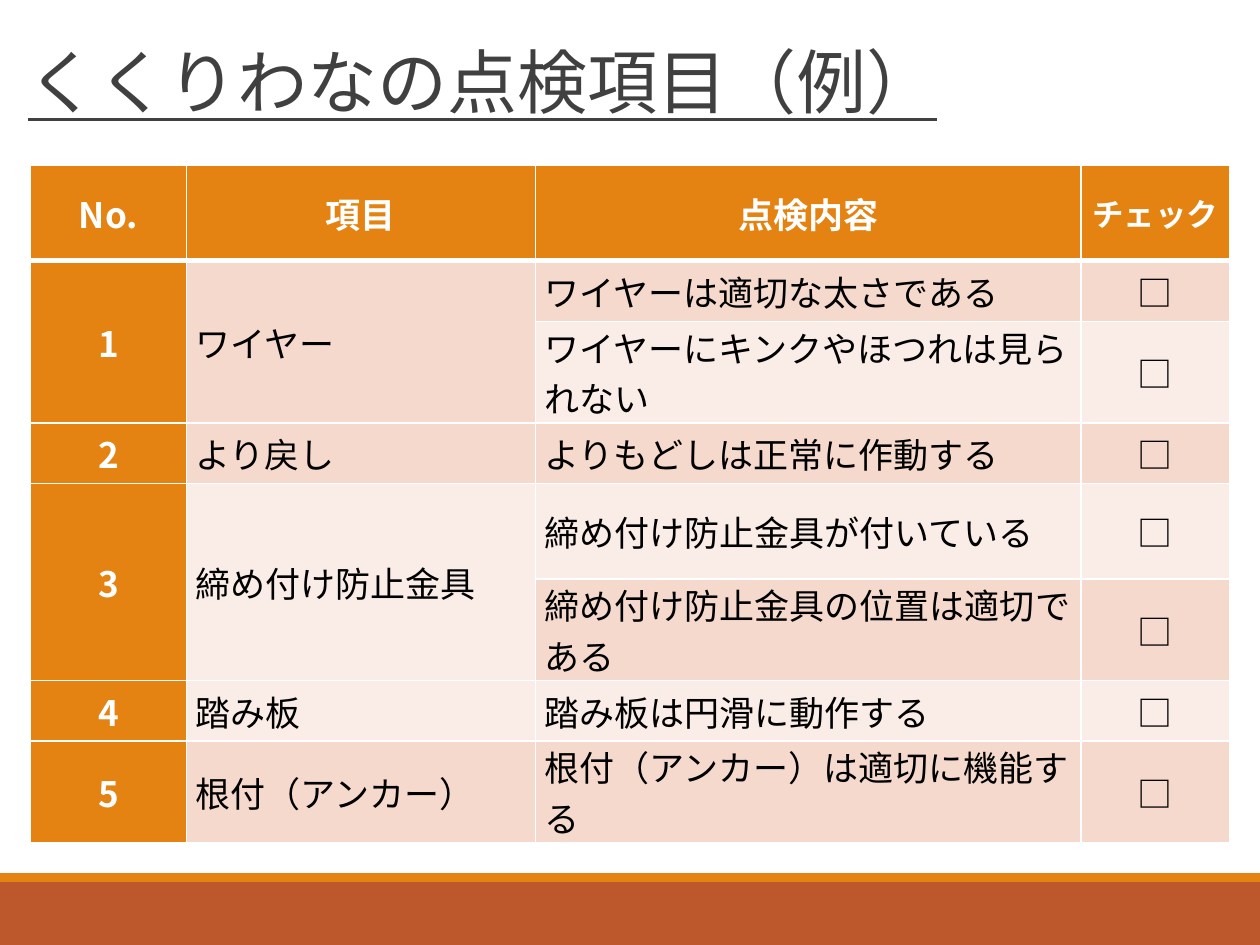
import pptx
import pptx.dml.color
import pptx.enum.shapes
import pptx.enum.text
import pptx.oxml
import pptx.oxml.ns
import pptx.util
from pptx.util import Inches

COLORS = {"orange": "E48312", "rust": "BD582C", "odd": "F5D9CC", "even": "FAEDE7",
          "title": "404040", "text": "000000", "white": "FFFFFF"}
FONT = "Noto Sans CJK JP"
CENTER = pptx.enum.text.PP_ALIGN.CENTER
LEFT = pptx.enum.text.PP_ALIGN.LEFT
MIDDLE = pptx.enum.text.MSO_ANCHOR.MIDDLE

HEADINGS = ["No.", "項目", "点検内容", "チェック"]
INSPECTIONS = [
    ("ワイヤー", ["ワイヤーは適切な太さである", "ワイヤーにキンクやほつれは見られない"]),
    ("より戻し", ["よりもどしは正常に作動する"]),
    ("締め付け防止金具", ["締め付け防止金具が付いている", "締め付け防止金具の位置は適切である"]),
    ("踏み板", ["踏み板は円滑に動作する"]),
    ("根付（アンカー）", ["根付（アンカー）は適切に機能する"]),
]
COLUMN_WIDTHS = [1.24, 2.77, 4.33, 1.18]
ROW_HEIGHTS = [0.76, 0.48, 0.76, 0.48, 0.76, 0.76, 0.48, 0.76]


def rgb(name):
    return pptx.dml.color.RGBColor.from_string(COLORS[name])


def style_run(run, size, color, bold=False):
    run.font.size = pptx.util.Pt(size)
    run.font.name = FONT
    run.font.bold = bold
    run.font.color.rgb = rgb(color)
    east_asian = pptx.oxml.parse_xml(
        f'<a:ea {pptx.oxml.ns.nsdecls("a")} typeface="{FONT}"/>')
    run.font._element.find(pptx.oxml.ns.qn("a:latin")).addnext(east_asian)


def set_borders(cell, top, bottom):
    properties = cell._tc.get_or_add_tcPr()
    widths = {"lnL": 1, "lnR": 1, "lnT": top, "lnB": bottom}
    for position, (side, width) in enumerate(widths.items()):
        properties.insert(position, pptx.oxml.parse_xml(
            f'<a:{side} {pptx.oxml.ns.nsdecls("a")} w="{pptx.util.Pt(width)}">'
            f'<a:solidFill><a:srgbClr val="{COLORS["white"]}"/></a:solidFill></a:{side}>'))


def fill_cell(cell, text, fill, size=20, color="text", bold=False, align=LEFT):
    cell.text_frame.text = text
    cell.vertical_anchor = MIDDLE
    cell.margin_left = cell.margin_right = Inches(0.07)
    cell.margin_top = cell.margin_bottom = 0
    cell.fill.solid()
    cell.fill.fore_color.rgb = rgb(fill)
    line = cell.text_frame.paragraphs[0]
    line.alignment = align
    for run in line.runs:
        style_run(run, size, color, bold)


def add_footer(slide, left, top, width, height):
    stripe = 0.07
    bands = [(top + stripe, height - stripe, "rust"), (top, stripe, "orange")]
    for band_top, band_height, color in bands:
        band = slide.shapes.add_shape(
            pptx.enum.shapes.MSO_SHAPE.RECTANGLE,
            Inches(left), Inches(band_top), Inches(width), Inches(band_height))
        band.shadow.inherit = False
        band.fill.solid()
        band.fill.fore_color.rgb = rgb(color)
        band.line.fill.background()


def add_title(slide, left, top, width, height):
    title = slide.shapes.title
    title.left, title.top = Inches(left), Inches(top)
    title.width, title.height = Inches(width), Inches(height)
    frame = title.text_frame
    frame.text = "くくりわなの点検項目（例）"
    frame.word_wrap = True
    frame.auto_size = pptx.enum.text.MSO_AUTO_SIZE.NONE
    frame.vertical_anchor = MIDDLE
    frame.margin_left = Inches(0.22)
    heading = frame.paragraphs[0]
    heading.alignment = LEFT
    heading.line_spacing = 0.9
    heading.space_before = pptx.util.Pt(12)
    heading.space_after = pptx.util.Pt(2)
    style_run(heading.runs[0], 40, "title")
    heading.runs[0].font.underline = True


def add_checklist(slide, left, top, width, height):
    checklist = slide.shapes.add_table(
        len(ROW_HEIGHTS), len(COLUMN_WIDTHS),
        Inches(left), Inches(top), Inches(width), Inches(height)).table
    for column, column_width in zip(checklist.columns, COLUMN_WIDTHS):
        column.width = Inches(column_width)
    for row, row_height in zip(checklist.rows, ROW_HEIGHTS):
        row.height = Inches(row_height)

    for column, heading in enumerate(HEADINGS):
        size = 18 if heading == "チェック" else 20
        fill_cell(checklist.cell(0, column), heading, "orange", size, "white", True, CENTER)

    row = 1
    for number, (item, checks) in enumerate(INSPECTIONS, 1):
        last = row + len(checks) - 1
        if last > row:
            for column in (0, 1):
                checklist.cell(row, column).merge(checklist.cell(last, column))
        fill_cell(checklist.cell(row, 0), str(number), "orange",
                  color="white", bold=True, align=CENTER)
        fill_cell(checklist.cell(row, 1), item, "odd" if row % 2 else "even")
        for check in checks:
            shade = "odd" if row % 2 else "even"
            fill_cell(checklist.cell(row, 2), check, shade)
            fill_cell(checklist.cell(row, 3), "□", shade, align=CENTER)
            row += 1

    for row in range(len(ROW_HEIGHTS)):
        for column in range(len(COLUMN_WIDTHS)):
            set_borders(checklist.cell(row, column),
                        3 if row == 1 else 1, 3 if row == 0 else 1)


def main():
    deck = pptx.Presentation()
    deck.slide_width, deck.slide_height = Inches(10), Inches(7.5)
    slide = deck.slides.add_slide(deck.slide_layouts[5])
    add_footer(slide, 0, 6.93, 10, 0.57)
    add_checklist(slide, 0.24, 1.31, 9.53, 5.25)
    add_title(slide, 0, 0.33, 8.19, 0.71)
    deck.save("out.pptx")


if __name__ == "__main__":
    main()
